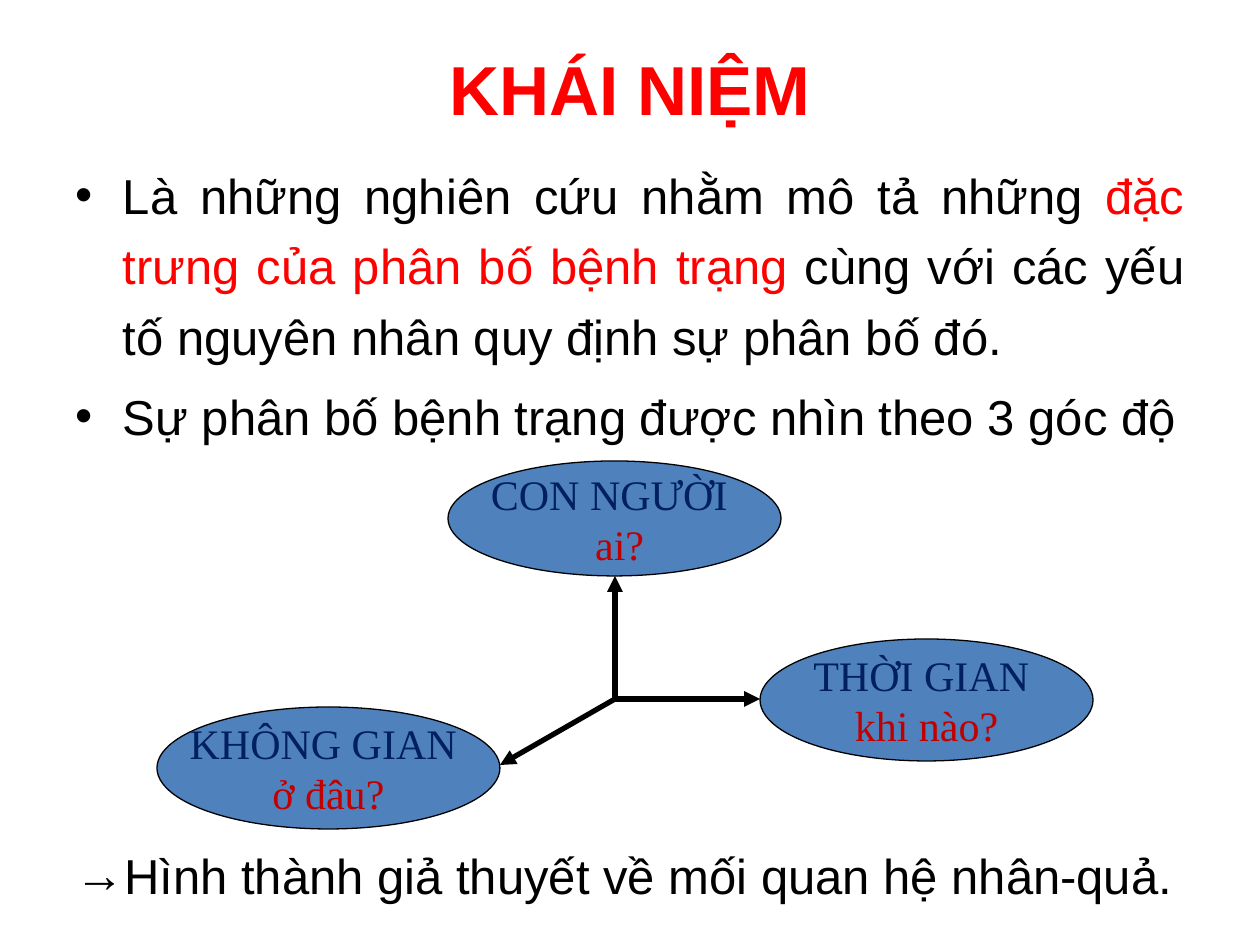
from dataclasses import dataclass

from lxml import etree
from pptx import Presentation, util as u
from pptx.dml.color import RGBColor as Rgb
from pptx.enum import shapes, text
from pptx.oxml.ns import qn


@dataclass
class Theme:
    red: str = "FF0000"
    black: str = "000000"
    fill: str = "4F81BD"
    navy: str = "002060"
    ask: str = "C00000"
    sans: str = "Arial"
    serif: str = "Times New Roman"
    head: float = 39.6
    body: int = 28
    node: int = 24


th = Theme()
PX = u.Inches(1) / 126


def box(*px):
    return [round(n * PX) for n in px]


def style(font, name, size, color):
    font.name, font.size = name, u.Pt(size)
    font.color.rgb = Rgb.from_string(color)


prs = Presentation()
prs.slide_width, prs.slide_height = box(1260, 945)
slide = prs.slides.add_slide(prs.slide_layouts[1])
title, body = slide.placeholders

# Title
title.left, title.top, title.width, title.height = box(63, 42, 1134, 91)
title.text_frame.text = "KHÁI NIỆM"
title.text_frame.auto_size = text.MSO_AUTO_SIZE.NONE
title.text_frame.vertical_anchor = text.MSO_ANCHOR.MIDDLE
para = title.text_frame.paragraphs[0]
para.alignment = text.PP_ALIGN.CENTER
style(para.font, th.sans, th.head, th.red)
para.font.bold = True

# Bullets; the last one sits below the diagram
body.left, body.top, body.width, body.height = box(63, 147, 1134, 658)
frame = body.text_frame
frame.auto_size = text.MSO_AUTO_SIZE.NONE
items = [
    ("•", None, [("Là những nghiên cứu nhằm mô tả những ", th.black),
                 ("đặc trưng của phân bố bệnh trạng ", th.red),
                 ("cùng với các yếu tố nguyên nhân quy định sự phân bố đó.", th.black)]),
    ("•", None, [("Sự phân bố bệnh trạng được nhìn theo 3 góc độ", th.black)]),
    ("→", 222, [("Hình thành giả thuyết về mối quan hệ nhân-quả.", th.black)]),
]
for i, (mark, gap, parts) in enumerate(items):
    para = frame.add_paragraph() if i else frame.paragraphs[0]
    para.alignment = text.PP_ALIGN.JUSTIFY
    para.line_spacing = 1.2
    if gap:
        para.space_before = u.Pt(gap)
    props = para._p.get_or_add_pPr()
    etree.SubElement(props, qn("a:buChar")).set("char", mark)
    style(para.font, th.sans, th.body, th.black)
    for words, color in parts:
        run = para.add_run()
        run.text = words
        run.font.color.rgb = Rgb.from_string(color)

# Three viewpoints
nodes = [
    ((157, 707, 343, 122), "KHÔNG GIAN ", "ở đâu?"),
    ((448, 461, 333, 115), "CON NGƯỜI ", " ai?"),
    ((760, 639, 333, 122), "THỜI GIAN ", "khi nào?"),
]
for place, name, ask in nodes:
    oval = slide.shapes.add_shape(shapes.MSO_SHAPE.OVAL, *box(*place))
    oval.shadow.inherit = False
    oval.fill.solid()
    oval.fill.fore_color.rgb = Rgb.from_string(th.fill)
    oval.line.color.rgb = Rgb.from_string(th.black)
    oval.line.width = u.Pt(0.75)
    frame = oval.text_frame
    frame.word_wrap = False
    frame.vertical_anchor = text.MSO_ANCHOR.MIDDLE
    frame.text = f"{name}\n{ask}"
    for para, color in zip(frame.paragraphs, (th.navy, th.ask)):
        para.alignment = text.PP_ALIGN.CENTER
        style(para.font, th.serif, th.node, color)

# Arrows from the shared origin
for end in [(615, 576), (760, 699), (500, 765)]:
    arrow = slide.shapes.add_connector(
        shapes.MSO_CONNECTOR.STRAIGHT, *box(615, 699, *end))
    arrow.line.color.rgb = Rgb.from_string(th.black)
    arrow.line.width = u.Pt(3)
    line = arrow.line._get_or_add_ln()
    etree.SubElement(line, qn("a:tailEnd")).set("type", "triangle")
    etree.SubElement(arrow._element.spPr, qn("a:effectLst"))

prs.save("out.pptx")
